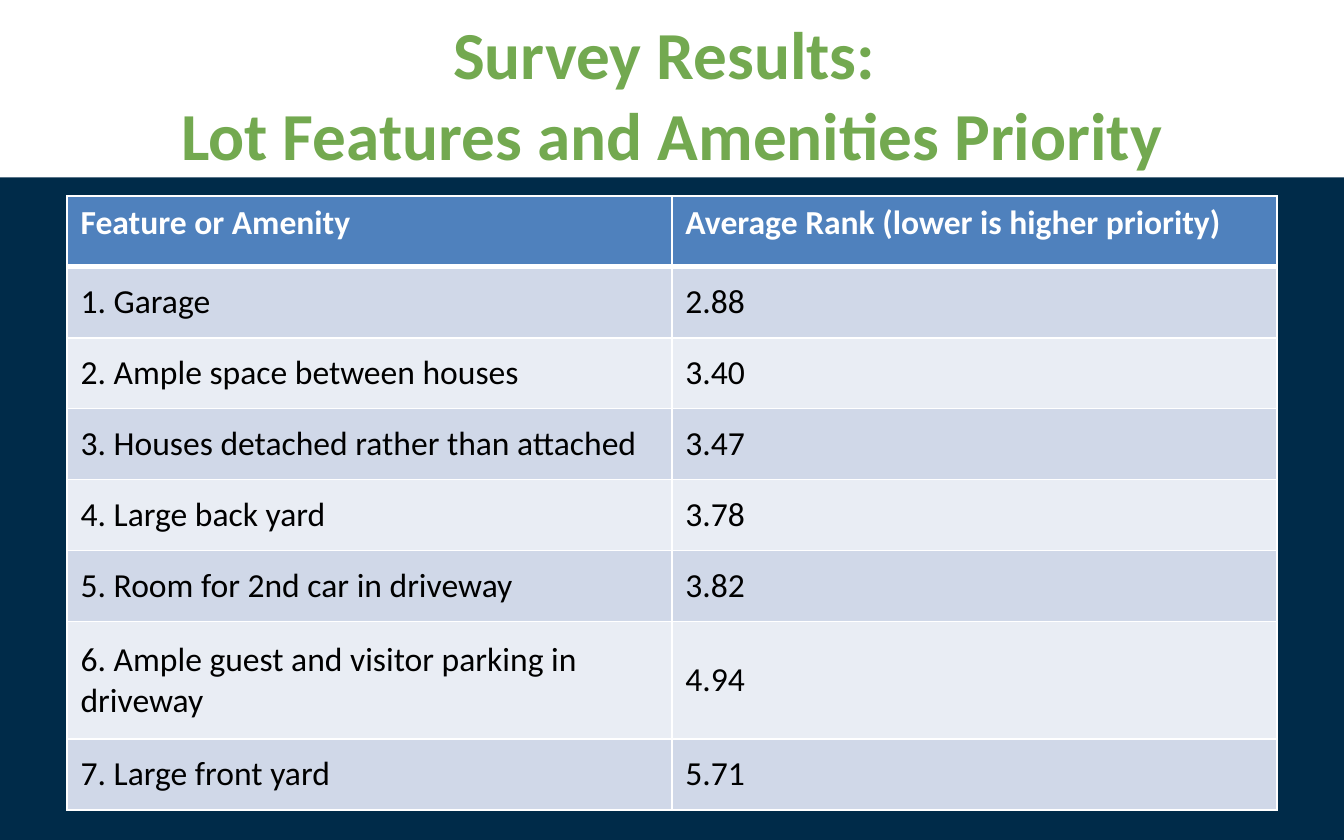
from dataclasses import dataclass

import pptx
import pptx.dml.color
import pptx.enum.shapes
import pptx.enum.text
import pptx.oxml.ns
import pptx.slide
import pptx.table
import pptx.util
from lxml import etree

Pt = pptx.util.Pt
RGBColor = pptx.dml.color.RGBColor
Anchor = pptx.enum.text.MSO_ANCHOR
qn = pptx.oxml.ns.qn

NAVY = RGBColor(0x00, 0x2B, 0x49)
WHITE = RGBColor(0xFF, 0xFF, 0xFF)
BLACK = RGBColor(0x00, 0x00, 0x00)
GREEN = RGBColor(0x73, 0xA9, 0x50)
BLUE = RGBColor(0x4F, 0x81, 0xBD)
BANDS = (RGBColor(0xD0, 0xD8, 0xE8), RGBColor(0xE9, 0xED, 0xF4))
FONT = "Calibri"
WIDTH, HEIGHT = 720, 450
LEFT, SPAN = 36, 648


@dataclass
class Item:
    name: str
    rank: str
    height: float = 38


HEAD = Item("Feature or Amenity", "Average Rank (lower is higher priority)")
ITEMS = [
    Item("1. Garage", "2.88"),
    Item("2. Ample space between houses", "3.40"),
    Item("3. Houses detached rather than attached", "3.47"),
    Item("4. Large back yard", "3.78"),
    Item("5. Room for 2nd car in driveway", "3.82"),
    Item("6. Ample guest and visitor parking in   driveway", "4.94", 63),
    Item("7. Large front yard", "5.71"),
]


def style(frame: pptx.text.text.TextFrame, size: float, color: RGBColor, bold: bool) -> None:
    for para in frame.paragraphs:
        for run in para.runs:
            run.font.name = FONT
            run.font.size = Pt(size)
            run.font.bold = bold
            run.font.color.rgb = color


def border(cell: pptx.table._Cell, side: str, width: float) -> None:
    props = cell._tc.get_or_add_tcPr()
    line = etree.SubElement(props, qn(f"a:ln{side}"), w=str(Pt(width)))
    fill = etree.SubElement(line, qn("a:solidFill"))
    etree.SubElement(fill, qn("a:srgbClr"), val=str(WHITE))


def banner(slide: pptx.slide.Slide) -> None:
    band = slide.shapes.add_shape(
        pptx.enum.shapes.MSO_SHAPE.RECTANGLE, Pt(0), Pt(0), Pt(WIDTH), Pt(95)
    )
    band.shadow.inherit = False
    band.fill.solid()
    band.fill.fore_color.rgb = WHITE
    band.line.fill.background()


def title(slide: pptx.slide.Slide) -> None:
    box = slide.shapes.add_textbox(Pt(LEFT), Pt(12.25), Pt(SPAN), Pt(75))
    frame = box.text_frame
    frame.word_wrap = True
    frame.vertical_anchor = Anchor.MIDDLE
    frame.text = "Survey Results: \vLot Features and Amenities Priority"
    frame.paragraphs[0].alignment = pptx.enum.text.PP_ALIGN.CENTER
    style(frame, 36, GREEN, True)


def grid(slide: pptx.slide.Slide) -> None:
    rows = [HEAD, *ITEMS]
    total = sum(item.height for item in rows)
    table = slide.shapes.add_table(
        len(rows), 2, Pt(LEFT), Pt(105), Pt(SPAN), Pt(total)
    ).table
    for col in table.columns:
        col.width = Pt(SPAN / 2)
    for num, item in enumerate(rows):
        head = num == 0
        table.rows[num].height = Pt(item.height)
        for col, text in enumerate((item.name, item.rank)):
            cell = table.cell(num, col)
            cell.text_frame.text = text
            cell.vertical_anchor = Anchor.TOP if head else Anchor.MIDDLE
            style(cell.text_frame, 18, WHITE if head else BLACK, head)
            border(cell, "L", 1)
            border(cell, "R", 1)
            border(cell, "T", 3 if num == 1 else 1)
            border(cell, "B", 3 if head else 1)
            cell.fill.solid()
            cell.fill.fore_color.rgb = BLUE if head else BANDS[(num - 1) % 2]


def main() -> None:
    deck = pptx.Presentation()
    deck.slide_width, deck.slide_height = Pt(WIDTH), Pt(HEIGHT)
    slide = deck.slides.add_slide(deck.slide_layouts[6])
    slide.background.fill.solid()
    slide.background.fill.fore_color.rgb = NAVY
    banner(slide)
    title(slide)
    grid(slide)
    deck.save("out.pptx")


if __name__ == "__main__":
    main()
